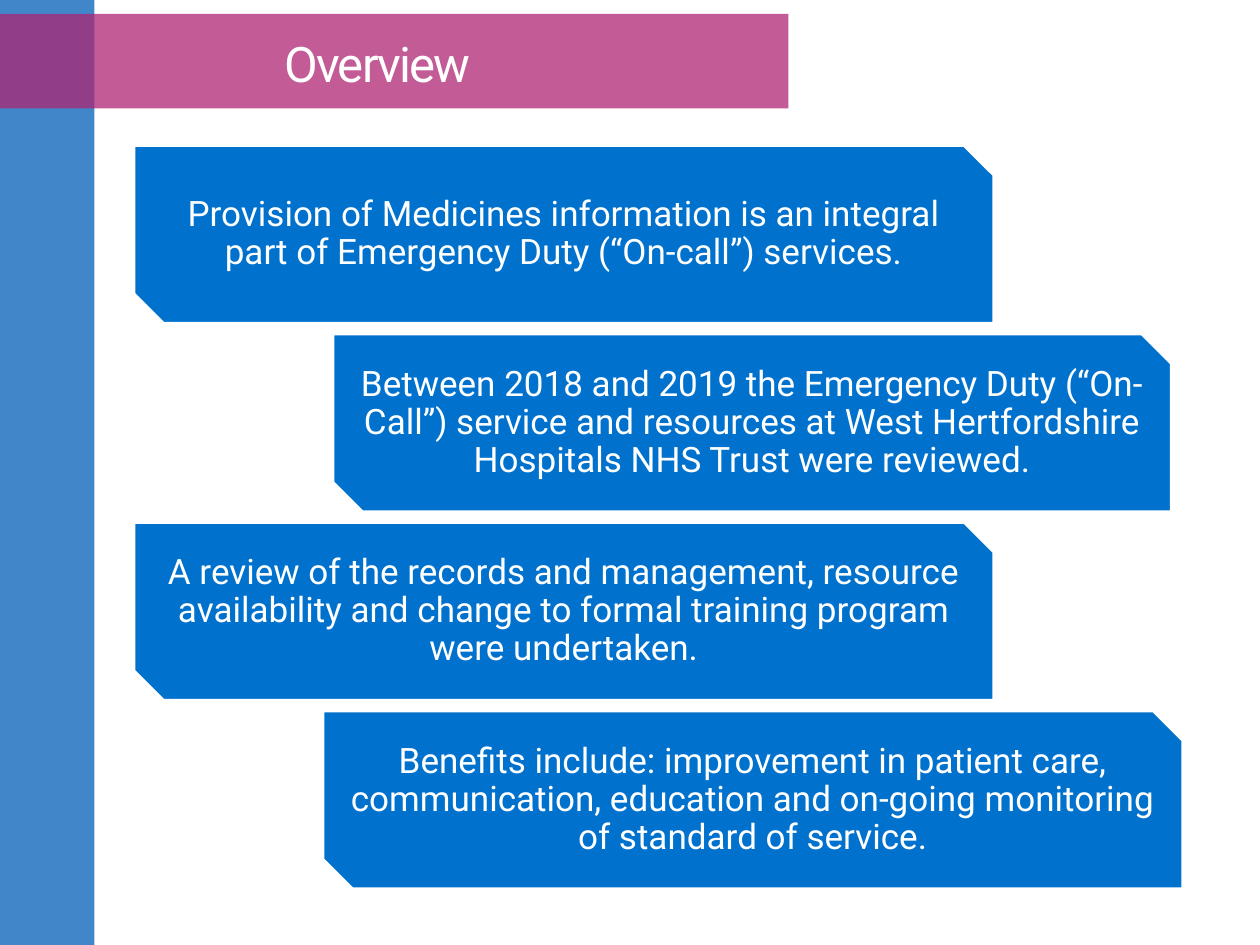
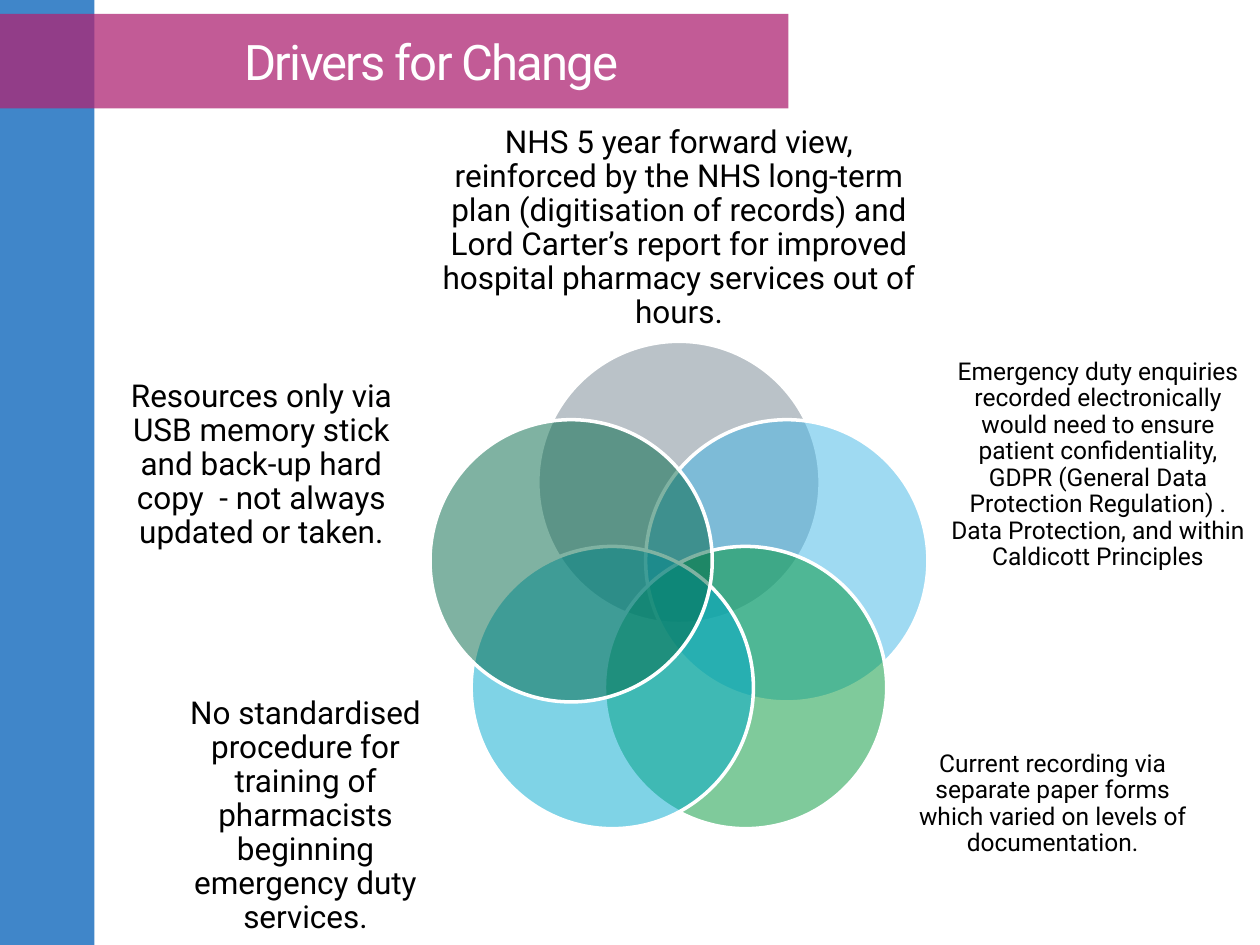
"""Build the overview and drivers-for-change slides on emergency duty services."""
import math
from dataclasses import dataclass

import pptx
import pptx.dml.color
import pptx.enum.shapes
import pptx.enum.text
import pptx.oxml.ns
import pptx.util
from lxml import etree

Pt = pptx.util.Pt
ShapeKind = pptx.enum.shapes.MSO_SHAPE


@dataclass(frozen=True)
class Theme:
    font: str = "Roboto"
    side_band: str = "005EB8"
    title_band: str = "AE2573"
    card: str = "0072CE"
    white: str = "FFFFFF"
    black: str = "000000"
    title_size: int = 28
    card_size: int = 20
    label_size: int = 18
    small_label_size: int = 14
    outline: int = 2
    band_opacity: int = 75
    circle_opacity: int = 50


theme = Theme()


def add_filled(slide, kind, box, color, opacity=100, outlined=False):
    """Add a shadowless preset shape with a solid, possibly transparent fill."""
    shape = slide.shapes.add_shape(kind, *[Pt(length) for length in box])
    shape.shadow.inherit = False
    shape.fill.solid()
    shape.fill.fore_color.rgb = pptx.dml.color.RGBColor.from_string(color)
    if opacity < 100:
        color_node = next(shape.element.spPr.iter(pptx.oxml.ns.qn("a:srgbClr")))
        alpha = etree.SubElement(color_node, pptx.oxml.ns.qn("a:alpha"))
        alpha.set("val", str(opacity * 1000))
    if outlined:
        shape.line.color.rgb = pptx.dml.color.RGBColor.from_string(theme.white)
        shape.line.width = Pt(theme.outline)
    else:
        shape.line.fill.background()
    return shape


def write_centred(shape, text, size, color, insets, spacing=0.9):
    """Write one centred run in the middle of a shape."""
    frame = shape.text_frame
    frame.word_wrap = True
    frame.auto_size = pptx.enum.text.MSO_AUTO_SIZE.NONE
    frame.vertical_anchor = pptx.enum.text.MSO_ANCHOR.MIDDLE
    frame.margin_left = frame.margin_right = Pt(insets[0])
    frame.margin_top = frame.margin_bottom = Pt(insets[1])
    paragraph = frame.paragraphs[0]
    paragraph.alignment = pptx.enum.text.PP_ALIGN.CENTER
    paragraph.line_spacing = spacing
    run = paragraph.add_run()
    run.text = text
    run.font.name = theme.font
    run.font.size = Pt(size)
    run.font.color.rgb = pptx.dml.color.RGBColor.from_string(color)
    return run


presentation = pptx.Presentation()
presentation.slide_width = Pt(720)
presentation.slide_height = Pt(540)
title_layout = presentation.slide_layouts[5]

slides = []
for title_text, title_box in [
    ("Overview", (54, 11.5, 323.3, 49)),
    ("Drivers for Change", (54, 9.4, 385.2, 51.1)),
]:
    slide = presentation.slides.add_slide(title_layout)
    title_band = add_filled(slide, ShapeKind.RECTANGLE, (0, 8, 450.5, 54),
                            theme.title_band, theme.band_opacity)
    slide.shapes.element.insert(2, title_band.element)
    title = slide.shapes.title
    title.left, title.top, title.width, title.height = [Pt(length) for length in title_box]
    title_run = write_centred(title, title_text, theme.title_size, theme.white, (7.2, 3.6), 1.0)
    title_run.font._element.set("spc", "-100")
    slides.append(slide)
overview, drivers = slides

side_band = add_filled(overview, ShapeKind.RECTANGLE, (0, 0, 54, 540),
                       theme.side_band, theme.band_opacity)
presentation.slide_master.shapes.element.insert(2, side_band.element)

card_top, card_height, card_pitch = 83, 102, 107.7
cards = [
    (76.3, 491.8, "Provision of Medicines information is an integral part of "
                  "Emergency Duty (“On-call”) services."),
    (190.1, 479.5, "Between 2018 and 2019 the Emergency Duty (“On-Call”) service and "
                   "resources at West Hertfordshire Hospitals NHS Trust were reviewed."),
    (76.3, 491.8, "A review of the records and management, resource availability and "
                  "change to formal training program were undertaken."),
    (184.3, 491.8, "Benefits include: improvement in patient care, communication, "
                   "education and on-going monitoring of standard of service."),
]
for index, (left, width, text) in enumerate(cards):
    box = (left, card_top + index * card_pitch, width, card_height)
    card = add_filled(overview, ShapeKind.SNIP_2_DIAG_RECTANGLE, box, theme.card, outlined=True)
    write_centred(card, text, theme.card_size, theme.white, (5, 2.7))

ring_x, ring_y, ring_radius, diameter = 388, 340.5, 64.8, 161.3
driver_labels = [
    ("768692", (249.1, 76.3, 277.9, 108.7), theme.label_size,
     "NHS 5 year forward view, reinforced by the NHS long-term plan (digitisation of records) "
     "and Lord Carter’s report for improved hospital pharmacy services out of hours."),
    ("41B6E6", (543.6, 190.8, 167.8, 149.8), theme.small_label_size,
     "Emergency duty enquiries recorded electronically would need to ensure patient "
     "confidentiality, GDPR (General Data Protection Regulation) . Data Protection, "
     "and within Caldicott Principles"),
    ("009639", (517.7, 388.8, 167.8, 141.1), theme.small_label_size,
     "Current recording via separate paper forms which varied on levels of documentation."),
    ("00A9CE", (90.7, 407.5, 167.8, 118.1), theme.label_size,
     "No standardised procedure for training of pharmacists beginning emergency duty services."),
    ("006747", (65.5, 185, 167.8, 162), theme.label_size,
     "Resources only via USB memory stick and back-up hard copy  - not always updated or taken."),
]
for index, (color, label_box, size, text) in enumerate(driver_labels):
    angle = 2 * math.pi * index / len(driver_labels)
    left = ring_x + ring_radius * math.sin(angle) - diameter / 2
    top = ring_y - ring_radius * math.cos(angle) - diameter / 2
    add_filled(drivers, ShapeKind.OVAL, (left, top, diameter, diameter),
               color, theme.circle_opacity, outlined=True)
    label = drivers.shapes.add_textbox(*[Pt(length) for length in label_box])
    write_centred(label, text, size, theme.black, (0, 0))

presentation.save("out.pptx")
